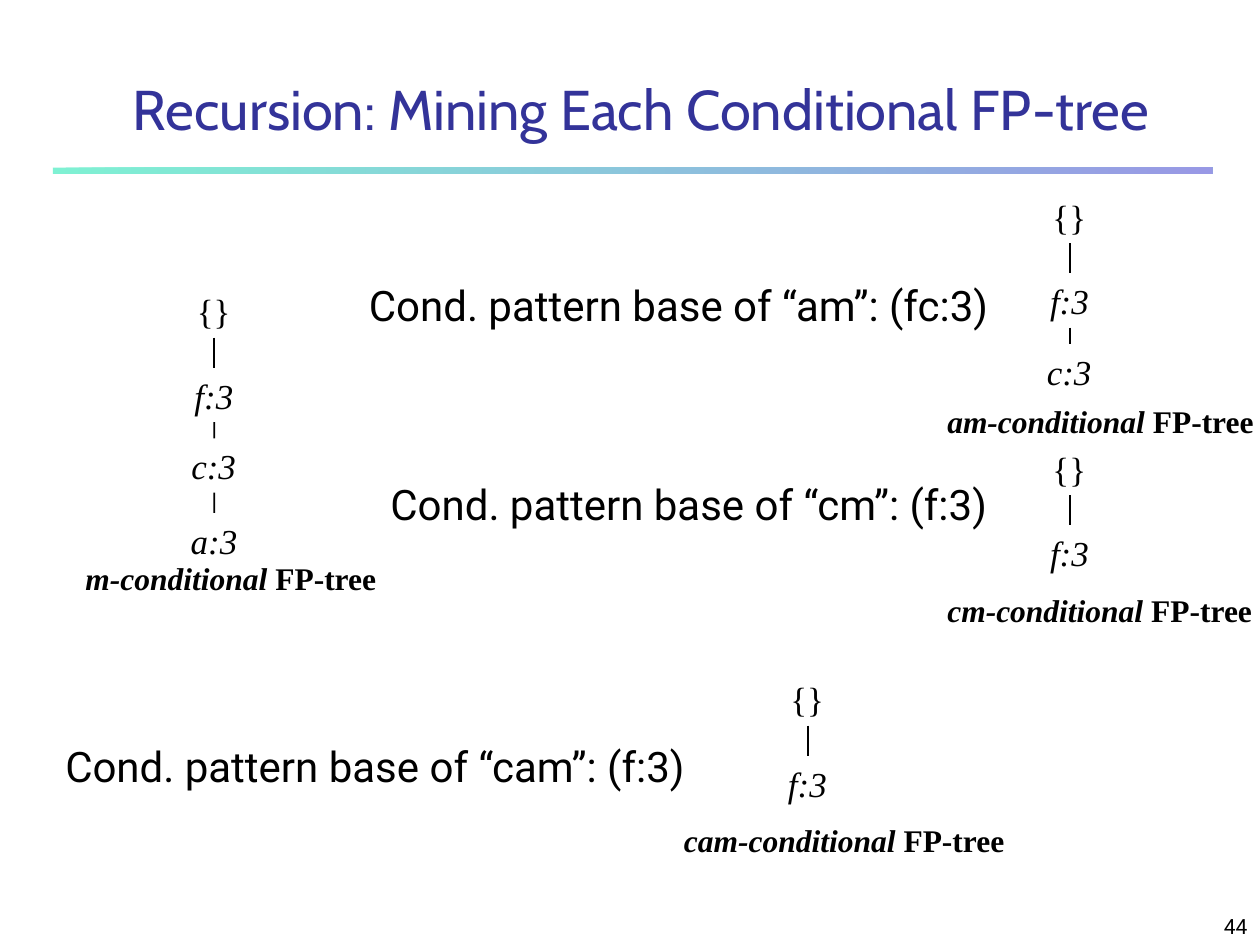
from dataclasses import dataclass

from lxml.etree import SubElement
from pptx import Presentation
from pptx.dml.color import RGBColor as RGB
from pptx.enum.shapes import MSO_CONNECTOR as CONN, MSO_SHAPE as SHAPE
from pptx.enum.text import MSO_ANCHOR as ANCHOR, MSO_AUTO_SIZE as AUTO, PP_ALIGN as ALIGN
from pptx.oxml.ns import qn
from pptx.util import Inches, Pt


@dataclass(frozen=True)
class Theme:
    ink: str = "000000"
    title: str = "333399"
    bar: tuple = ("00E4A8", "3333CC")
    title_font: str = "Cabin"
    body_font: str = "Roboto"
    tree_font: str = "Times New Roman"
    title_size: int = 32
    body_size: int = 24
    node_size: int = 20
    caption_size: int = 18
    number_size: int = 12


NODE_TOPS = (0, 0.67, 1.23, 1.82)
NODE_HEIGHT = 0.43
NODE_WIDTHS = {"{}": 0.47, "f:3": 0.51, "c:3": 0.56, "a:3": 0.57}


def add_run(p, text, font, size, color, bold=False, italic=False):
    r = p.add_run()
    r.text = text
    r.font.name = font
    r.font.size = Pt(size)
    r.font.color.rgb = RGB.from_string(color)
    r.font.bold = bold
    r.font.italic = italic


class SlideBuilder:
    def __init__(self, slide, theme):
        self.s = slide
        self.theme = theme

    def bar(self, *box):
        sp = self.s.shapes.add_shape(SHAPE.RECTANGLE, *map(Inches, box))
        sp.shadow.inherit = False
        sp.line.fill.background()
        sp.fill.gradient()
        sp.fill.gradient_angle = 0
        for stop, color in zip(sp.fill.gradient_stops, self.theme.bar):
            stop.color.rgb = RGB.from_string(color)
        for clr in sp._element.spPr.iter(qn("a:srgbClr")):
            SubElement(clr, qn("a:alpha")).set("val", "50000")

    def text(self, box, *parts, font, size, color=None, parent=None,
             align=ALIGN.LEFT, anchor=ANCHOR.TOP, wrap=False):
        sp = (parent or self.s).shapes.add_textbox(*map(Inches, box))
        tf = sp.text_frame
        tf.word_wrap = wrap
        tf.auto_size = AUTO.NONE if wrap else AUTO.SHAPE_TO_FIT_TEXT
        tf.vertical_anchor = anchor
        p = tf.paragraphs[0]
        p.alignment = align
        for text, style in parts:
            add_run(p, text, font, size, color or self.theme.ink, **style)
        return sp

    def title(self, box, text):
        self.text(box, (text, {}), font=self.theme.title_font,
                  size=self.theme.title_size, color=self.theme.title,
                  align=ALIGN.CENTER, anchor=ANCHOR.BOTTOM, wrap=True)

    def number(self, box, text):
        self.text(box, (text, {}), font=self.theme.body_font,
                  size=self.theme.number_size, align=ALIGN.RIGHT,
                  anchor=ANCHOR.BOTTOM, wrap=True)

    def pattern_base(self, left, top, width, name, base):
        self.text((left, top, width, 0.5),
                  (f"Cond. pattern base of “{name}”: ({base})", {}),
                  font=self.theme.body_font, size=self.theme.body_size)

    def link(self, parent, upper, lower):
        line = parent.shapes.add_connector(CONN.STRAIGHT, 0, 0, 0, 0)
        line.begin_connect(upper, 2)
        line.end_connect(lower, 0)
        line.line.width = Pt(1)
        line.line.color.rgb = RGB.from_string(self.theme.ink)
        SubElement(line._element.spPr, qn("a:effectLst"))

    def tree(self, name, center, top, labels, caption_left, caption_width):
        group = self.s.shapes.add_group_shape()
        nodes = []
        for label, offset in zip(labels, NODE_TOPS):
            width = NODE_WIDTHS[label]
            box = (center - width / 2, top + offset, width, NODE_HEIGHT)
            nodes.append(self.text(box, (label, {"italic": label != "{}"}),
                                   font=self.theme.tree_font,
                                   size=self.theme.node_size, parent=group))
        for upper, lower in zip(nodes, nodes[1:]):
            self.link(group, upper, lower)
        caption_top = top + 0.14 + 0.5 * len(labels)
        self.text((caption_left, caption_top, caption_width, 0.4),
                  (f"{name}-conditional ", {"bold": True, "italic": True}),
                  ("FP-tree", {"bold": True}),
                  font=self.theme.tree_font, size=self.theme.caption_size,
                  parent=group)


def main():
    prs = Presentation()
    prs.slide_width, prs.slide_height = Inches(10), Inches(7.5)
    b = SlideBuilder(prs.slides.add_slide(prs.slide_layouts[6]), Theme())

    b.bar(0.42, 1.33, 9.2, 0.05)
    b.number((7.92, 7.08, 2.08, 0.42), "44")
    b.title((0.42, 0.42, 9.34, 0.75), "Recursion: Mining Each Conditional FP-tree")

    b.tree("m", 1.7, 2.25, ("{}", "f:3", "c:3", "a:3"), 0.58, 2.51)
    b.pattern_base(2.83, 2.17, 5.26, "am", "fc:3")
    b.tree("am", 8.49, 1.5, ("{}", "f:3", "c:3"), 7.42, 2.64)
    b.pattern_base(3, 3.75, 5.09, "cm", "f:3")
    b.tree("cm", 8.49, 3.5, ("{}", "f:3"), 7.42, 2.62)
    b.pattern_base(0.42, 5.83, 5.26, "cam", "f:3")
    b.tree("cam", 6.41, 5.33, ("{}", "f:3"), 5.33, 2.75)

    prs.save("out.pptx")


if __name__ == "__main__":
    main()
